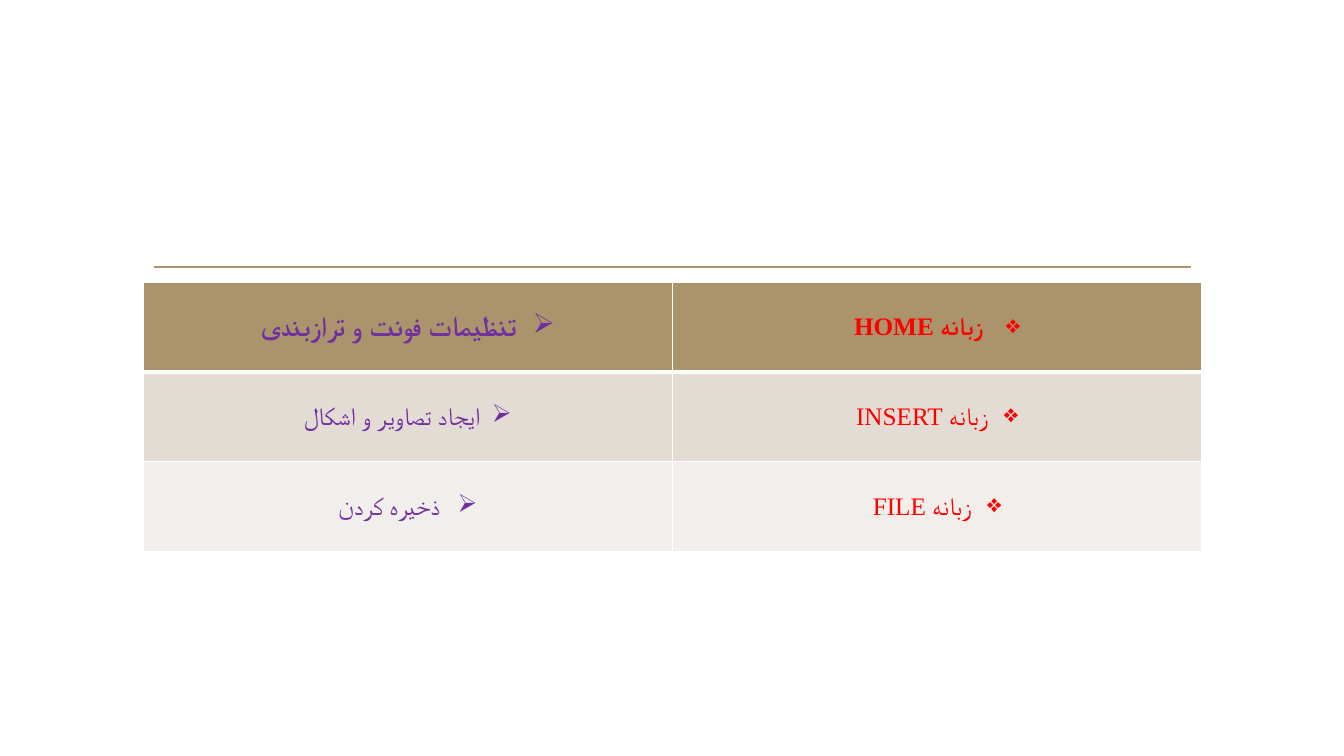
from lxml.etree import SubElement
from pptx import Presentation
from pptx.dml.color import RGBColor
from pptx.enum.shapes import MSO_CONNECTOR
from pptx.enum.text import MSO_ANCHOR, PP_ALIGN
from pptx.oxml import parse_xml
from pptx.oxml.ns import nsdecls, qn
from pptx.util import Inches, Pt

# Content: (task, tab) per row
ROWS = [
    ("تنظیمات فونت و ترازبندی", "زبانه HOME"),
    ("ایجاد تصاویر و اشکال", "زبانه INSERT"),
    (" ذخیره کردن", "زبانه FILE"),
]
COLORS = {"tan": "AB946B", "band1": "E2DCD4", "band2": "F1EEEB",
          "task": "7030A0", "tab": "FF0000", "border": "FFFFFF"}
COLUMNS = [("➢", "task"), ("❖", "tab")]
FILLS = ["tan", "band1", "band2"]
FONT = "Times New Roman"
LEFT, TOP, COL_W, ROW_H = 1.42, 2.8, 5.25, 0.89


def rgb(name):
    return RGBColor.from_string(COLORS[name])


def set_borders(cell, bottom):
    tcPr = cell._tc.get_or_add_tcPr()
    widths = {"lnL": 1, "lnR": 1, "lnT": 1, "lnB": bottom}
    for i, (tag, width) in enumerate(widths.items()):
        tcPr.insert(i, parse_xml(
            f'<a:{tag} {nsdecls("a")} w="{Pt(width)}"><a:solidFill>'
            f'<a:srgbClr val="{COLORS["border"]}"/></a:solidFill></a:{tag}>'))


def set_bullet(p, char, indent):
    pPr = p._p.get_or_add_pPr()
    pPr.set("marL", str(Inches(indent)))
    pPr.set("indent", str(Inches(-indent)))
    pPr.set("rtl", "1")
    SubElement(pPr, qn("a:buChar")).set("char", char)


def fill_cell(cell, text, bullet, color, row):
    header = row == 0
    cell.fill.solid()
    cell.fill.fore_color.rgb = rgb(FILLS[row])
    set_borders(cell, 3 if header else 1)
    cell.vertical_anchor = MSO_ANCHOR.MIDDLE
    p = cell.text_frame.paragraphs[0]
    p.text = text
    p.alignment = PP_ALIGN.CENTER
    set_bullet(p, bullet, 0.38 if header else 0.31)
    r = p.runs[0]
    r.font.size = Pt(20 if header and color == "task" else 18)
    r.font.bold = header
    r.font.color.rgb = rgb(color)
    r.font.name = FONT
    SubElement(r._r.get_or_add_rPr(), qn("a:cs")).set("typeface", FONT)


prs = Presentation()
prs.slide_width, prs.slide_height = Inches(13.33), Inches(7.5)
s = prs.slides.add_slide(prs.slide_layouts[6])

# Rule above the table
rule = s.shapes.add_connector(MSO_CONNECTOR.STRAIGHT, Inches(1.53), Inches(2.65),
                              Inches(11.81), Inches(2.65))
rule.line.color.rgb = rgb("tan")
rule.line.width = Pt(1.25)
SubElement(rule._element.spPr, qn("a:effectLst"))

# Table of tabs and tasks
table = s.shapes.add_table(len(ROWS), len(COLUMNS), Inches(LEFT), Inches(TOP),
                           Inches(COL_W * len(COLUMNS)),
                           Inches(ROW_H * len(ROWS))).table
for col in table.columns:
    col.width = Inches(COL_W)
for i, texts in enumerate(ROWS):
    table.rows[i].height = Inches(ROW_H)
    for j, (bullet, color) in enumerate(COLUMNS):
        fill_cell(table.cell(i, j), texts[j], bullet, color, i)

prs.save("out.pptx")
